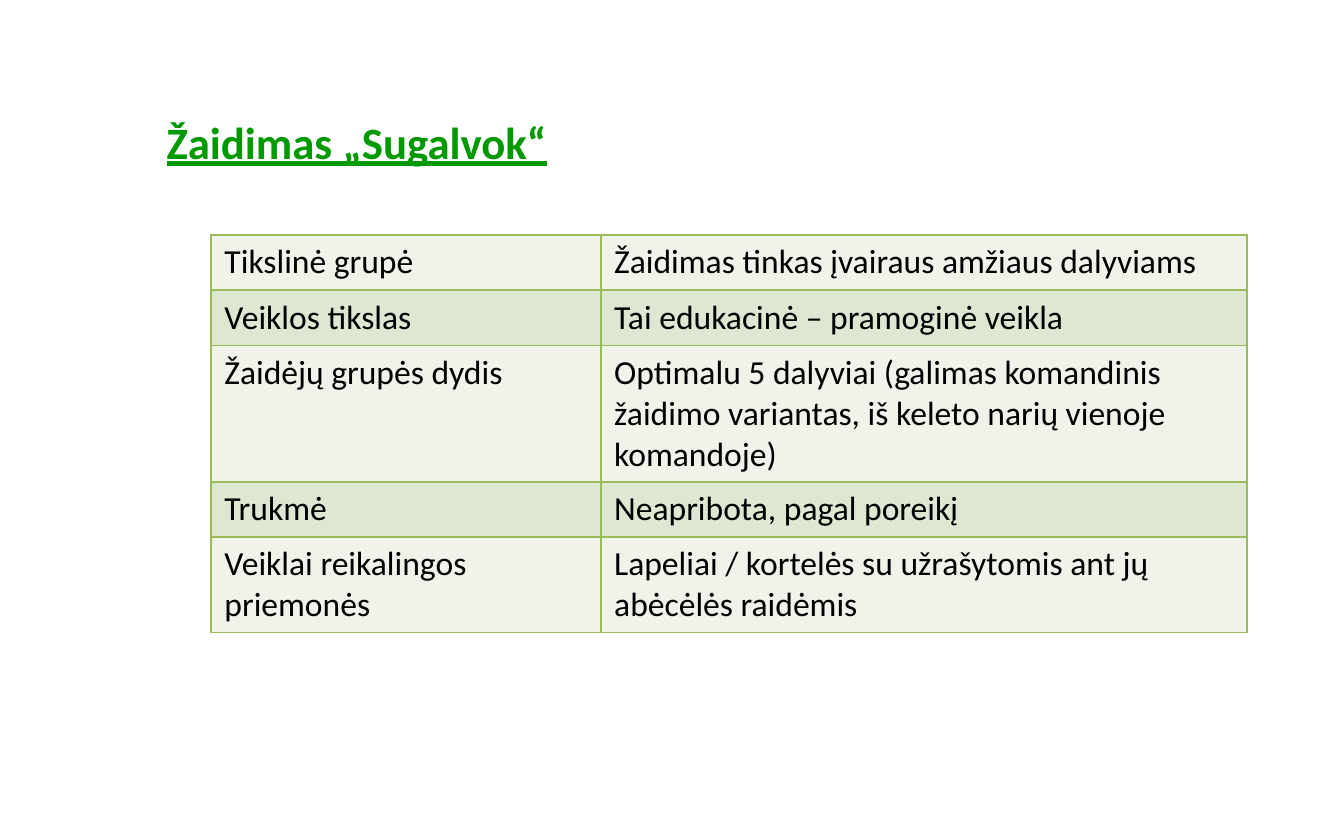
from lxml.etree import SubElement
from pptx import Presentation
from pptx.dml.color import RGBColor
from pptx.enum.text import MSO_ANCHOR, PP_ALIGN
from pptx.oxml.ns import qn
from pptx.util import Inches, Pt

# Content
TITLE = "Žaidimas „Sugalvok“"
ROWS = [
    ("Tikslinė grupė", "Žaidimas tinkas įvairaus amžiaus dalyviams"),
    ("Veiklos tikslas", "Tai edukacinė – pramoginė veikla"),
    ("Žaidėjų grupės dydis",
     "Optimalu 5 dalyviai (galimas komandinis žaidimo variantas, "
     "iš keleto narių vienoje komandoje)"),
    ("Trukmė", "Neapribota, pagal poreikį"),
    ("Veiklai reikalingos priemonės",
     "Lapeliai / kortelės su užrašytomis ant jų abėcėlės raidėmis"),
]

# Style
FONT = "Calibri"
GREEN = RGBColor(0x00, 0x99, 0x00)
BLACK = RGBColor(0x00, 0x00, 0x00)
BORDER = RGBColor(0x9B, 0xBB, 0x59)
BANDS = (RGBColor(0xEF, 0xF3, 0xEA), RGBColor(0xDE, 0xE7, 0xD1))
COL_WIDTHS = (2.9, 4.81)
ROW_HEIGHT = 0.41


def add_text(p, text, size, color):
    r = p.add_run()
    r.text = text
    r.font.name = FONT
    r.font.size = Pt(size)
    r.font.color.rgb = color
    return r


def set_borders(cell, color, width):
    tc_pr = cell._tc.get_or_add_tcPr()
    for i, side in enumerate(("lnL", "lnR", "lnT", "lnB")):
        ln = tc_pr.makeelement(qn(f"a:{side}"), {"w": str(Pt(width))})
        fill = SubElement(ln, qn("a:solidFill"))
        SubElement(fill, qn("a:srgbClr"), val=str(color))
        tc_pr.insert(i, ln)  # borders come before the cell fill


prs = Presentation()
prs.slide_width, prs.slide_height = Inches(10), Inches(6.25)
s = prs.slides.add_slide(prs.slide_layouts[5])

# Title
title = s.shapes.title
title.left, title.top = Inches(1.14), Inches(0.53)
title.width, title.height = Inches(8.29), Inches(1.04)
tf = title.text_frame
tf.vertical_anchor = MSO_ANCHOR.MIDDLE
p = tf.paragraphs[0]
p.alignment = PP_ALIGN.LEFT
r = add_text(p, TITLE, 24, GREEN)
r.font.bold = True
r.font.underline = True

# Table
table = s.shapes.add_table(
    len(ROWS), len(COL_WIDTHS), Inches(1.57), Inches(1.75),
    Inches(sum(COL_WIDTHS)), Inches(ROW_HEIGHT * len(ROWS))).table
table.first_row = False
for column, width in zip(table.columns, COL_WIDTHS):
    column.width = Inches(width)
for i, texts in enumerate(ROWS):
    table.rows[i].height = Inches(ROW_HEIGHT)
    for j, text in enumerate(texts):
        cell = table.cell(i, j)
        cell.fill.solid()
        cell.fill.fore_color.rgb = BANDS[i % 2]
        set_borders(cell, BORDER, 1)
        add_text(cell.text_frame.paragraphs[0], text, 18, BLACK)

prs.save("out.pptx")
